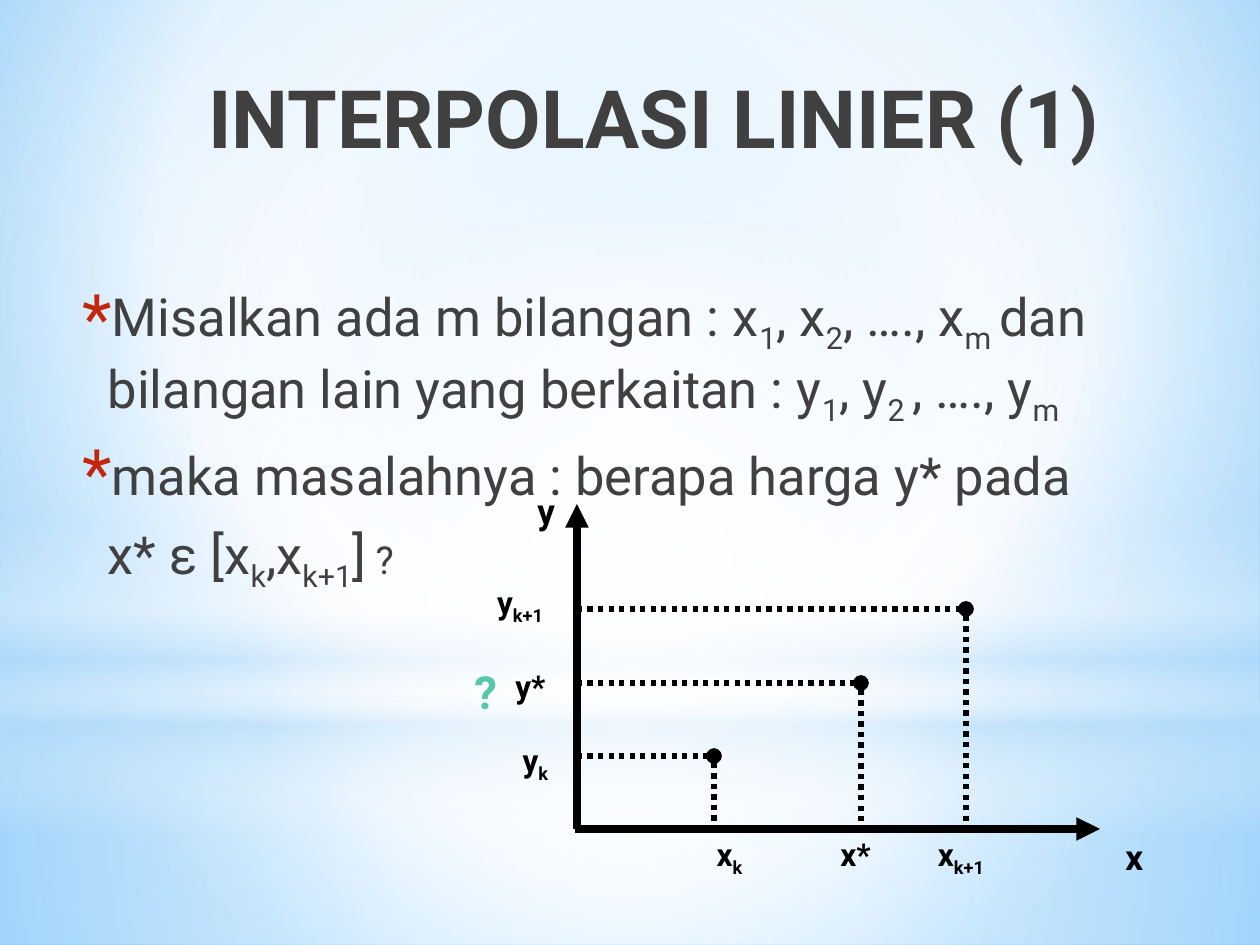
from lxml.etree import SubElement
from pptx import Presentation
from pptx.dml.color import RGBColor
from pptx.enum.dml import MSO_LINE_DASH_STYLE as DASH
from pptx.enum.shapes import MSO_CONNECTOR as CONNECTOR, MSO_SHAPE as SHAPE
from pptx.enum.text import MSO_ANCHOR as ANCHOR, MSO_AUTO_SIZE as AUTO_SIZE, PP_ALIGN as ALIGN
from pptx.oxml.ns import qn
from pptx.util import Emu, Pt

EMU_PER_PX = 914400 / 126
FONT = "Roboto"
BLACK = RGBColor(0x00, 0x00, 0x00)
GREY = RGBColor(0x40, 0x40, 0x40)
RED = RGBColor(0xC3, 0x26, 0x0C)
TEAL = RGBColor(0x56, 0xC7, 0xAA)
WHITE = RGBColor(0xFF, 0xFF, 0xFF)
MIST = RGBColor(0xB4, 0xDC, 0xFA)
SKY = RGBColor(0x9E, 0xD5, 0xFF)
AZURE = RGBColor(0x5B, 0xB9, 0xFF)

ORIGIN = (577, 829)
CENTRE = (50, 50, 50, 50)
BACKDROP = [
    (SHAPE.RECTANGLE, (0, 703, 1260, 242),
     [(0, WHITE, 91), (37, WHITE, 76), (100, MIST, 79)], CENTRE),
    (SHAPE.RECTANGLE, (0, 0, 1260, 703),
     [(0, WHITE, 89), (48, WHITE, 62), (100, MIST, 79)], CENTRE),
    (SHAPE.RECTANGLE, (0, 519, 1260, 315),
     [(0, WHITE, 0), (29, WHITE, 30), (45, MIST, 40),
      (55, WHITE, 26), (65, MIST, 60), (100, WHITE, 0)], None),
    (SHAPE.OVAL, (0, 221, 1260, 703), [(0, WHITE, 100), (56, WHITE, 0)], CENTRE),
]
POINTS = [(714, 756), (861, 683), (966, 609)]
LABELS = [
    (["y"], (525, 483, 42, 54), 20, ALIGN.LEFT, BLACK),
    (["x"], (1113, 829, 53, 54), 20, ALIGN.LEFT, BLACK),
    (["y", "k+1"], (473, 577, 94, 50), 18, ALIGN.CENTER, BLACK),
    (["x", "k+1"], (914, 829, 94, 50), 18, ALIGN.CENTER, BLACK),
    (["y", "k"], (504, 735, 63, 50), 18, ALIGN.CENTER, BLACK),
    (["x", "k"], (693, 829, 73, 50), 18, ALIGN.CENTER, BLACK),
    (["y*"], (494, 661, 73, 50), 18, ALIGN.CENTER, BLACK),
    (["x*"], (819, 829, 73, 50), 18, ALIGN.CENTER, BLACK),
    (["?"], (462, 658, 53, 67), 26, ALIGN.LEFT, TEAL),
]
BULLETS = [
    ["Misalkan ada m bilangan : x", "1", ", x", "2", ", …., x", "m ",
     "dan bilangan lain yang berkaitan : y", "1", ", y", "2 ", ", …., y", "m"],
    ["maka masalahnya : berapa harga y* pada"],
]
INTERVAL = ["x* ε [x", "k", ",x", "k+1", "]"]


def px(value):
    return Emu(round(value * EMU_PER_PX))


def place(shape, box):
    shape.left, shape.top, shape.width, shape.height = map(px, box)


def set_gradient(properties, stops, focus):
    solid = properties.find(qn("a:solidFill"))
    gradient = solid.makeelement(qn("a:gradFill"), {"rotWithShape": "1"})
    stop_list = SubElement(gradient, qn("a:gsLst"))
    for position, color, opacity in stops:
        stop = SubElement(stop_list, qn("a:gs"), pos=str(position * 1000))
        value = SubElement(stop, qn("a:srgbClr"), val=str(color))
        SubElement(value, qn("a:alpha"), val=str(opacity * 1000))
    if focus:
        radial = SubElement(gradient, qn("a:path"), {"path": "circle"})
        sides = {side: str(share * 1000) for side, share in zip("ltrb", focus)}
        SubElement(radial, qn("a:fillToRect"), sides)
    else:
        SubElement(gradient, qn("a:lin"), ang="5400000", scaled="0")
    properties.replace(solid, gradient)


def add_backdrop(slide):
    slide.background.fill.solid()
    set_gradient(slide.element.find(".//" + qn("p:bgPr")),
                 [(0, SKY, 100), (60, WHITE, 100), (100, AZURE, 100)], (20, 10, 20, 60))
    for kind, box, stops, focus in BACKDROP:
        shape = slide.shapes.add_shape(kind, *map(px, box))
        shape.shadow.inherit = False
        shape.line.fill.background()
        shape.fill.solid()
        set_gradient(shape.element.spPr, stops, focus)
        slide.shapes.title.element.addprevious(shape.element)


def add_run(paragraph, text, size, color, bold=False, subscript=False):
    run = paragraph.add_run()
    run.text = text
    font = run.font
    font.name, font.size, font.bold = FONT, Pt(size), bold
    font.color.rgb = color
    if subscript:
        run._r.get_or_add_rPr().set("baseline", "-25000")


def add_runs(paragraph, pieces, size, color, bold=False):
    for index, text in enumerate(pieces):
        add_run(paragraph, text, size, color, bold, subscript=index % 2 == 1)


def format_title(title):
    place(title, (108, 55, 1004, 158))
    frame = title.text_frame
    frame.auto_size = AUTO_SIZE.NONE
    frame.vertical_anchor = ANCHOR.TOP
    frame.margin_top = px(13)
    paragraph = frame.paragraphs[0]
    paragraph.alignment = ALIGN.RIGHT
    add_run(paragraph, "INTERPOLASI LINIER (1)", 46, GREY, bold=True)


def set_bullet(paragraph, starred):
    properties = paragraph._p.get_or_add_pPr()
    properties.set("marL", str(px(32)))
    properties.set("indent", str(px(-25) if starred else 0))
    if starred:
        color = SubElement(properties, qn("a:buClr"))
        SubElement(color, qn("a:srgbClr"), val=str(RED))
        SubElement(properties, qn("a:buSzPct"), val="130000")
        SubElement(properties, qn("a:buFont"), typeface=FONT)
        SubElement(properties, qn("a:buChar"), char="*")
    else:
        SubElement(properties, qn("a:buNone"))


def fill_body(body):
    place(body, (63, 278, 1171, 625))
    frame = body.text_frame
    frame.auto_size = AUTO_SIZE.NONE
    frame.vertical_anchor = ANCHOR.TOP
    for index, pieces in enumerate(BULLETS + [INTERVAL]):
        paragraph = frame.add_paragraph() if index else frame.paragraphs[0]
        set_bullet(paragraph, pieces is not INTERVAL)
        paragraph.space_before = Pt(6 if index else 0)
        paragraph.space_after = Pt(3)
        add_runs(paragraph, pieces, 30, GREY)
    add_run(paragraph, " ?", 22, GREY)


def add_line(slide, start, end, width, dash=None, head=None, tail=None):
    connector = slide.shapes.add_connector(
        CONNECTOR.STRAIGHT, *map(px, start), *map(px, end))
    line = connector.line
    line.color.rgb = BLACK
    line.width = Pt(width)
    if dash:
        line.dash_style = dash
    outline = line._get_or_add_ln()
    for tag, kind in (("a:headEnd", head), ("a:tailEnd", tail)):
        if kind:
            SubElement(outline, qn(tag), type=kind)
    SubElement(connector.element.spPr, qn("a:effectLst"))


def add_graph(slide):
    origin_x, origin_y = ORIGIN
    add_line(slide, (origin_x - 2, origin_y), (1100, origin_y), 4.5, tail="triangle")
    add_line(slide, ORIGIN, (origin_x, 504), 4.5, tail="triangle")
    for point in POINTS:
        x, y = point
        add_line(slide, (origin_x, y), point, 3, DASH.ROUND_DOT)
        add_line(slide, point, (x, origin_y), 3, DASH.ROUND_DOT, head="oval")


def add_label(slide, pieces, box, size, alignment, color):
    frame = slide.shapes.add_textbox(*map(px, box)).text_frame
    frame.word_wrap = True
    paragraph = frame.paragraphs[0]
    paragraph.alignment = alignment
    add_runs(paragraph, pieces, size, color, bold=True)


def main():
    presentation = Presentation()
    presentation.slide_width, presentation.slide_height = px(1260), px(945)
    slide = presentation.slides.add_slide(presentation.slide_layouts[1])
    add_backdrop(slide)
    format_title(slide.shapes.title)
    fill_body(slide.placeholders[1])
    add_graph(slide)
    for label in LABELS:
        add_label(slide, *label)
    presentation.save("out.pptx")


if __name__ == "__main__":
    main()
